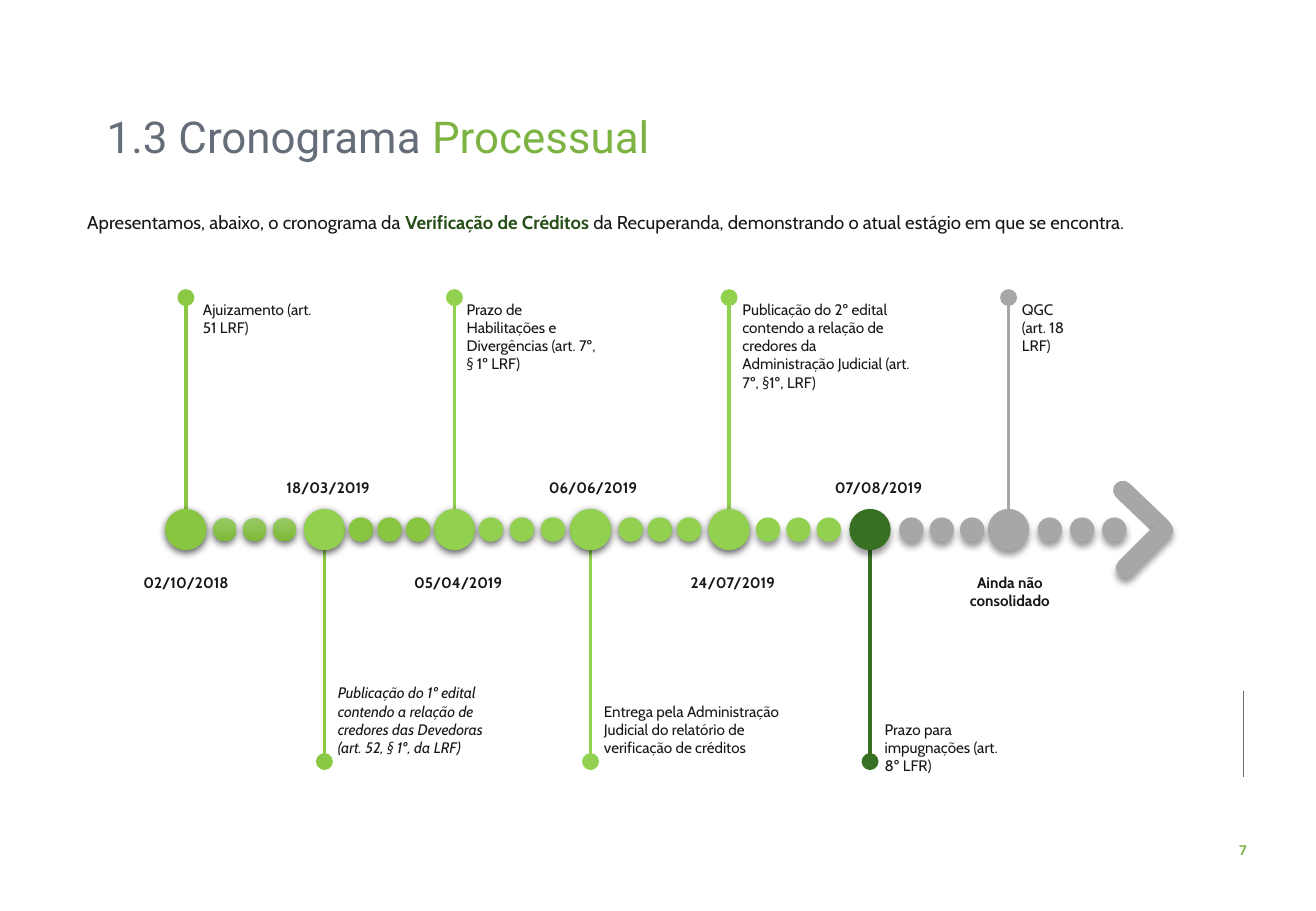
import pptx
import pptx.util
import pptx.dml.color
import pptx.enum.shapes
import pptx.enum.text
import pptx.oxml
import pptx.oxml.ns
from lxml import etree

Inches = pptx.util.Inches
Pt = pptx.util.Pt
RGBColor = pptx.dml.color.RGBColor
MSO_SHAPE = pptx.enum.shapes.MSO_SHAPE
ANCHOR = pptx.enum.text.MSO_ANCHOR
ALIGN = pptx.enum.text.PP_ALIGN
qn = pptx.oxml.ns.qn

SLATE = RGBColor(0x65, 0x6D, 0x78)
INK = RGBColor(0x18, 0x17, 0x17)
ACCENT = RGBColor(0x7C, 0xB3, 0x42)
DEEP_GREEN = RGBColor(0x26, 0x4F, 0x17)
LIME = RGBColor(0x92, 0xD0, 0x50)
LEAF = RGBColor(0x8B, 0xC9, 0x44)
GRASS = RGBColor(0x88, 0xC6, 0x41)
FOREST = RGBColor(0x37, 0x70, 0x23)
GRAY = RGBColor(0xA7, 0xA7, 0xA7)
SHADE_TOP = RGBColor(0x98, 0xCA, 0x65)
SHADE_BOTTOM = RGBColor(0x7C, 0xB9, 0x36)

# Shadows: opacity in percent, blur and distance in points
TIGHT_SHADOW = (63, 4.5, 1.5)
SOFT_SHADOW = (40, 4, 3)

BIG_DOT, SMALL_DOT = 0.33, 0.19
UP, DOWN = -1, 1
DATE_TOP = {UP: 0.31, DOWN: -0.47}

# x, pin direction, dot colour, pin colour, shadow, date, date shift and width,
# label lines, label box relative to the milestone, italic
MILESTONES = [
    (0, UP, GRASS, LEAF, TIGHT_SHADOW, "02/10/2018", 0, 1.76,
     ["Ajuizamento (art. 51 LRF)"], (0.05, -1.94, 1.12, 0.4), False),
    (1.14, DOWN, LIME, LEAF, TIGHT_SHADOW, "18/03/2019", 0.03, 1.1,
     ["Publicação do 1º edital contendo a relação de credores das Devedoras "
      "(art. 52, § 1º, da LRF)"], (0.02, 1.22, 1.43, 0.71), True),
    (2.21, UP, LIME, LIME, TIGHT_SHADOW, "05/04/2019", 0.03, 1.1,
     ["Prazo de Habilitações e Divergências (art. 7º, § 1º LRF)"],
     (0.01, -1.94, 1.3, 0.56), False),
    (3.33, DOWN, LIME, LIME, TIGHT_SHADOW, "06/06/2019", 0.02, 1.1,
     ["Entrega pela Administração Judicial do relatório de verificação de créditos"],
     (0.02, 1.37, 1.78, 0.56), False),
    (4.47, UP, LIME, LIME, TIGHT_SHADOW, "24/07/2019", 0.03, 1.1,
     ["Publicação do 2º edital contendo a relação de credores da Administração "
      "Judicial (art. 7º, §1º, LRF)"], (0.02, -1.94, 1.57, 0.71), False),
    (5.63, DOWN, FOREST, FOREST, SOFT_SHADOW, "07/08/2019", 0.07, 1.1,
     ["Prazo para impugnações (art. 8º LFR)"], (0.03, 1.52, 1.24, 0.56), False),
    (6.77, UP, GRAY, GRAY, SOFT_SHADOW, "Ainda não consolidado", 0.01, 1.11,
     ["QGC", "(art. 18 LRF)"], (0.02, -1.94, 0.75, 0.56), False),
]

# Centre of the first small dot, step, colour (None for shaded), shadow
DOT_GROUPS = [
    (0.32, 0.245, None, TIGHT_SHADOW),
    (1.44, 0.235, GRASS, TIGHT_SHADOW),
    (2.51, 0.255, LIME, TIGHT_SHADOW),
    (3.66, 0.24, LIME, TIGHT_SHADOW),
    (4.79, 0.25, LIME, SOFT_SHADOW),
    (5.97, 0.25, GRAY, SOFT_SHADOW),
    (7.11, 0.265, GRAY, SOFT_SHADOW),
]


def add_text(slide, box, paragraphs, size, font="Cabin", align=ALIGN.LEFT,
             anchor=ANCHOR.TOP, inset=0.09, wrap=True):
    """Each paragraph is a list of (text, colour, bold, italic) runs."""
    shape = slide.shapes.add_textbox(*map(Inches, box))
    frame = shape.text_frame
    frame.word_wrap = wrap
    frame.vertical_anchor = anchor
    frame.margin_left = frame.margin_right = Inches(inset)
    frame.margin_top = frame.margin_bottom = Inches(0.05)
    for index, runs in enumerate(paragraphs):
        paragraph = frame.add_paragraph() if index else frame.paragraphs[0]
        paragraph.alignment = align
        for text, color, bold, italic in runs:
            run = paragraph.add_run()
            run.text = text
            run.font.name = font
            run.font.size = Pt(size)
            run.font.bold = bold
            run.font.italic = italic
            run.font.color.rgb = color
    return frame.paragraphs[0]


def add_solid(slide, preset, center_x, center_y, width, height, color,
              shadow=None, line_width=None):
    shape = slide.shapes.add_shape(
        preset, Inches(center_x - width / 2), Inches(center_y - height / 2),
        Inches(width), Inches(height))
    if color is None:
        shape.fill.gradient()
        shape.fill.gradient_angle = 270
        for stop, shade in zip(shape.fill.gradient_stops, (SHADE_TOP, SHADE_BOTTOM)):
            stop.color.rgb = shade
    else:
        shape.fill.solid()
        shape.fill.fore_color.rgb = color
    if color is None or line_width is None:
        shape.line.fill.background()
    else:
        shape.line.color.rgb = color
        shape.line.width = Pt(line_width)
    shape.shadow.inherit = False
    if shadow:
        opacity, blur, distance = shadow
        effects = shape.element.spPr.find(qn("a:effectLst"))
        outer = etree.SubElement(effects, qn("a:outerShdw"), blurRad=str(Pt(blur)),
                                 dist=str(Pt(distance)), dir="5400000", rotWithShape="0")
        tint = etree.SubElement(outer, qn("a:srgbClr"), val="000000")
        etree.SubElement(tint, qn("a:alpha"), val=str(opacity * 1000))
    return shape


def add_line(slide, x, start_y, end_y, color, width, oval_head=False):
    line = slide.shapes.add_connector(
        pptx.enum.shapes.MSO_CONNECTOR.STRAIGHT,
        Inches(x), Inches(start_y), Inches(x), Inches(end_y))
    line.line.color.rgb = color
    line.line.width = Pt(width)
    properties = line.element.spPr
    if oval_head:
        etree.SubElement(properties.find(qn("a:ln")), qn("a:headEnd"),
                         type="oval", w="lg", len="lg")
    etree.SubElement(properties, qn("a:effectLst"))


def add_heading(slide, left, top):
    title = [("1.3 Cronograma ", SLATE, False, False), ("Processual", ACCENT, False, False)]
    paragraph = add_text(slide, (left + 0.47, top, 8.18, 0.53), [title], 26, "Roboto",
                         anchor=ANCHOR.BOTTOM, inset=0.1)
    paragraph.line_spacing = 0.9
    intro = [
        ("Apresentamos, abaixo, o cronograma da ", INK, False, False),
        ("Verificação de Créditos ", DEEP_GREEN, True, False),
        ("da Recuperanda, demonstrando o atual estágio em que se encontra.", INK, False, False),
    ]
    paragraph = add_text(slide, (left, top + 0.8, 10.17, 0.3), [intro], 11,
                         align=ALIGN.JUSTIFY, inset=0.1)
    paragraph.line_spacing = 1.14
    paragraph._p.get_or_add_pPr().set("indent", str(Inches(0.31)))


def add_milestone(slide, x, axis, direction, color, pin_color, shadow, date,
                  date_shift, date_width, label, label_box, italic):
    add_line(slide, x, axis + direction * 1.91, axis, pin_color, 2, oval_head=True)
    add_solid(slide, MSO_SHAPE.OVAL, x, axis, BIG_DOT, BIG_DOT, color, shadow, 0.75)
    date_left = x + date_shift - date_width / 2
    date_top = axis + DATE_TOP[direction]
    add_text(slide, (date_left, date_top, date_width, 0.25),
             [[(date, INK, True, False)]], 9, align=ALIGN.CENTER)
    offset_x, offset_y, width, height = label_box
    add_text(slide, (x + offset_x, axis + offset_y, width, height),
             [[(text, INK, False, italic)] for text in label], 9)


def add_timeline(slide, left, axis):
    for x, *details in MILESTONES:
        add_milestone(slide, left + x, axis, *details)
    # Small dots between milestones
    for first, step, color, shadow in DOT_GROUPS:
        for index in range(3):
            add_solid(slide, MSO_SHAPE.OVAL, left + first + index * step, axis,
                      SMALL_DOT, SMALL_DOT, color, shadow, 0.75)
    # Arrowhead closing the timeline
    for x, y, rotation, shadow in ((7.87, -0.17, 43.7, None), (7.89, 0.16, 315, SOFT_SHADOW)):
        bar = add_solid(slide, MSO_SHAPE.ROUNDED_RECTANGLE, left + x, axis + y,
                        0.6, 0.16, GRAY, shadow)
        bar.adjustments[0] = 0.5
        bar.rotation = rotation


def add_page_mark(slide, x, top):
    add_line(slide, x, top, top + 0.71, SLATE, 0.5)
    add_text(slide, (x - 0.17, top + 1.19, 0.34, 0.24), [[("7", ACCENT, True, False)]],
             8.1, "Roboto", ALIGN.CENTER, wrap=False)


def main():
    presentation = pptx.Presentation()
    presentation.slide_width = Inches(10.83)
    presentation.slide_height = Inches(7.5)
    slide = presentation.slides.add_slide(presentation.slide_layouts[6])
    add_page_mark(slide, 10.23, 5.69)
    add_heading(slide, 0.31, 0.86)
    add_timeline(slide, 1.53, 4.36)
    presentation.save("out.pptx")


if __name__ == "__main__":
    main()
